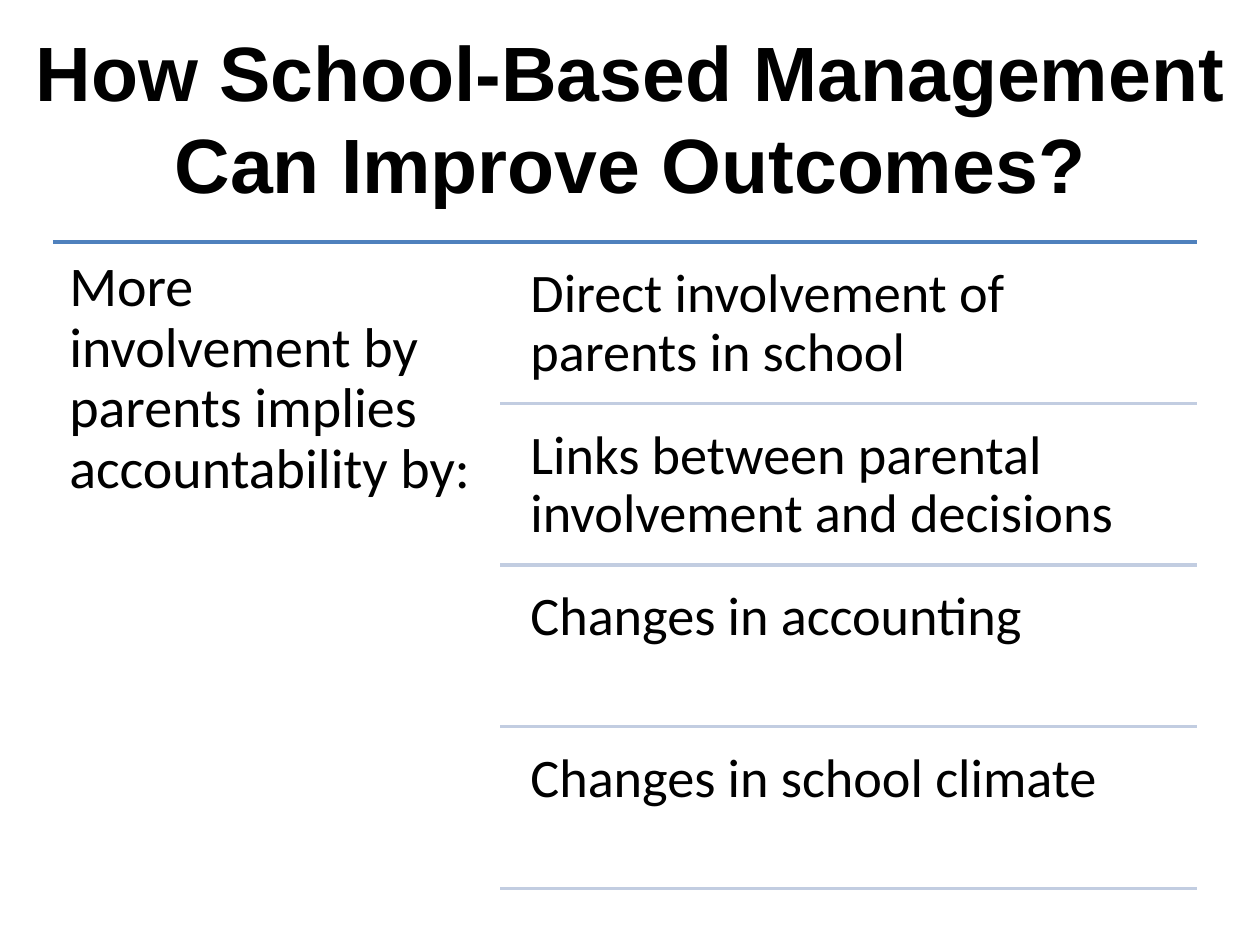
from pptx import Presentation
from pptx.dml.color import RGBColor
from pptx.enum.shapes import MSO_CONNECTOR
from pptx.enum.text import MSO_ANCHOR, MSO_AUTO_SIZE, PP_ALIGN
from pptx.oxml.ns import qn
from pptx.util import Inches, Pt
from lxml.etree import SubElement

COLORS = {"text": "000000", "main_rule": "4F81BD", "row_rule": "C2CDE1"}

# Grid of the list, in inches
LEFT, MIDDLE, RIGHT = 0.42, 3.97, 9.5
TOP, ROW_HEIGHT = 1.92, 1.2825
TEXT_LEFT, TEXT_GAP = 4.08, 0.06

HEADING = "More involvement by parents implies accountability by:"
CHANNELS = [
    "Direct involvement of parents in school",
    "Links between parental involvement and decisions",
    "Changes in accounting",
    "Changes in school climate",
]


class SlideBuilder:
    def __init__(self, presentation):
        self.slide = presentation.slides.add_slide(presentation.slide_layouts[5])

    def row_top(self, row):
        return TOP + row * ROW_HEIGHT

    def style(self, paragraph, font_name, size, bold=False):
        font = paragraph.font
        font.name, font.size, font.bold = font_name, Pt(size), bold
        font.color.rgb = RGBColor.from_string(COLORS["text"])

    def title(self, text):
        shape = self.slide.shapes.title
        shape.left, shape.top = Inches(0.17), Inches(0.3)
        shape.width, shape.height = Inches(9.67), Inches(1.25)
        frame = shape.text_frame
        frame.text = text
        frame.auto_size = MSO_AUTO_SIZE.NONE
        frame.vertical_anchor = MSO_ANCHOR.MIDDLE
        paragraph = frame.paragraphs[0]
        paragraph.alignment = PP_ALIGN.CENTER
        self.style(paragraph, "Arial", 44, bold=True)

    def text(self, text, left, top, width, height, size):
        shape = self.slide.shapes.add_textbox(*map(Inches, (left, top, width, height)))
        frame = shape.text_frame
        frame.word_wrap = True
        frame.margin_left = frame.margin_right = Inches(0.13)
        frame.margin_top = frame.margin_bottom = Inches(0.13)
        frame.text = text
        paragraph = frame.paragraphs[0]
        paragraph.line_spacing = 0.9
        self.style(paragraph, "Calibri", size)

    def rule(self, left, row, color):
        y = Inches(self.row_top(row))
        line = self.slide.shapes.add_connector(
            MSO_CONNECTOR.STRAIGHT, Inches(left), y, Inches(RIGHT), y)
        line.line.color.rgb = RGBColor.from_string(COLORS[color])
        line.line.width = Pt(2)
        SubElement(line._element.spPr, qn("a:effectLst"))


def main():
    presentation = Presentation()
    presentation.slide_width, presentation.slide_height = Inches(10), Inches(7.5)
    builder = SlideBuilder(presentation)

    # Title
    builder.title("How School-Based Management Can Improve Outcomes?")

    # Heading column under the main rule
    builder.rule(LEFT, 0, "main_rule")
    builder.text(HEADING, LEFT, TOP, 3.56, 5.19, 32)

    # Channels, each closed by a rule
    for row, channel in enumerate(CHANNELS):
        builder.text(channel, TEXT_LEFT, builder.row_top(row) + TEXT_GAP,
                     RIGHT - TEXT_LEFT, ROW_HEIGHT - TEXT_GAP, 31)
        builder.rule(MIDDLE, row + 1, "row_rule")

    presentation.save("out.pptx")


if __name__ == "__main__":
    main()
